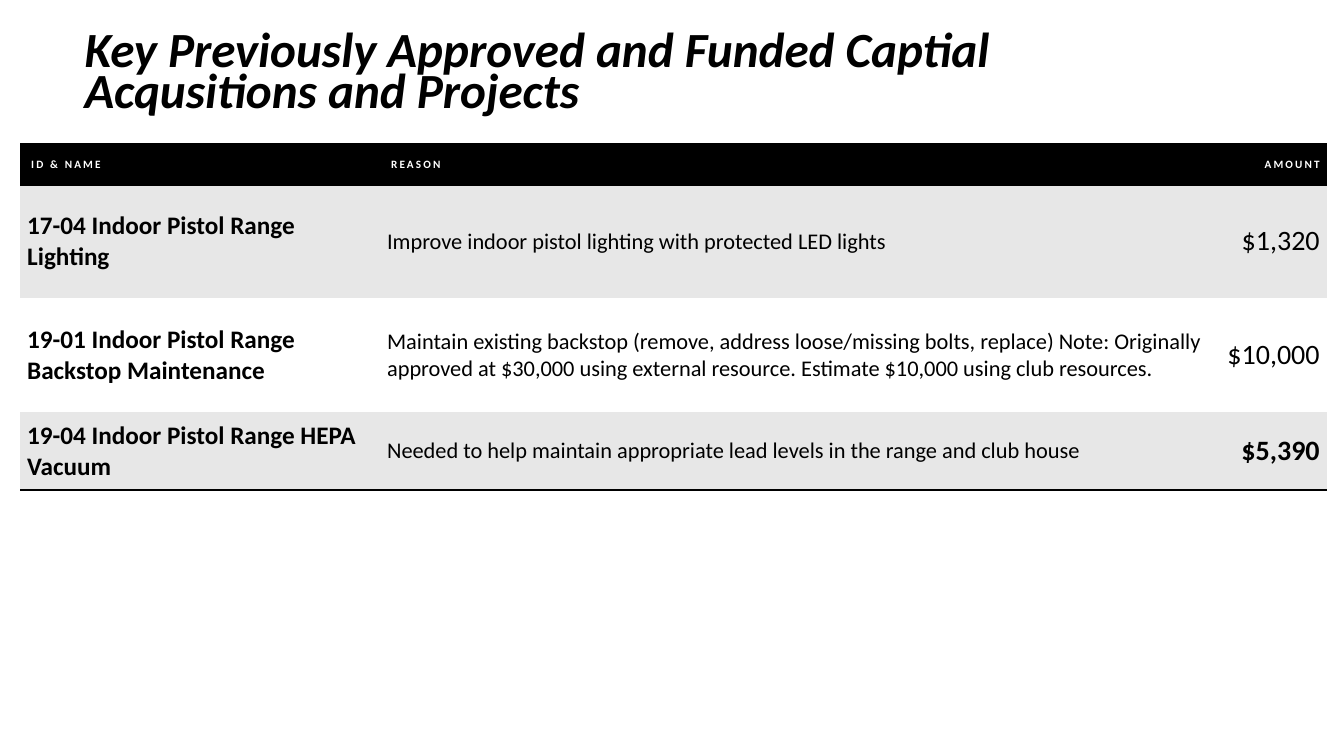
from lxml.etree import SubElement
from pptx import Presentation
from pptx.dml.color import RGBColor
from pptx.enum.text import MSO_ANCHOR, PP_ALIGN
from pptx.oxml.ns import qn
from pptx.util import Inches, Pt


def color(value):
    return RGBColor.from_string(value)


def set_border(cell, side, points):
    """Draw a black cell border, or none when points is 0."""
    line = SubElement(cell._tc.get_or_add_tcPr(), qn(f"a:ln{side}"), w=str(Pt(points)))
    if points:
        fill = SubElement(line, qn("a:solidFill"))
        SubElement(fill, qn("a:srgbClr"), val="000000")
    else:
        SubElement(line, qn("a:noFill"))


presentation = Presentation()
presentation.slide_width = Inches(13.33)
presentation.slide_height = Inches(7.5)
slide = presentation.slides.add_slide(presentation.slide_layouts[6])

# Title
title = slide.shapes.add_textbox(Inches(0.74), Inches(0.19), Inches(11.5), Inches(1.02))
title.text_frame.word_wrap = True
title.text_frame.vertical_anchor = MSO_ANCHOR.BOTTOM
paragraph = title.text_frame.paragraphs[0]
paragraph.text = "Key Previously Approved and Funded Captial Acqusitions and Projects"
paragraph.line_spacing = 0.7
paragraph.space_after = Pt(6)
paragraph.font.name = "Calibri"
paragraph.font.size = Pt(35.1)
paragraph.font.bold = paragraph.font.italic = True
paragraph.font.color.rgb = color("000000")

# Project table
rows = [
    ("ID & NAME", "REASON", "AMOUNT"),
    ("17-04 Indoor Pistol Range Lighting",
     "Improve indoor pistol lighting with protected LED lights", "$1,320"),
    ("19-01 Indoor Pistol Range Backstop Maintenance",
     "Maintain existing backstop (remove, address loose/missing bolts, replace) "
     "Note: Originally approved at $30,000 using external resource. "
     "Estimate $10,000 using club resources. ", "$10,000"),
    ("19-04 Indoor Pistol Range HEPA Vacuum",
     "Needed to help maintain appropriate lead levels in the range and club house",
     "$5,390"),
]
column_widths = [3.57, 8.3, 1.09]
row_heights = [0.4, 1.13, 1.13, 0.77]
body_sizes = [18, 16, 20]
last_row = len(rows) - 1

table = slide.shapes.add_table(len(rows), len(column_widths), Inches(0.2), Inches(1.43),
                               Inches(12.95), Inches(3.43)).table
table.first_row = table.horz_banding = False
for column, width in zip(table.columns, column_widths):
    column.width = Inches(width)

for row_index, row in enumerate(rows):
    table.rows[row_index].height = Inches(row_heights[row_index])
    header = row_index == 0
    for column_index, text in enumerate(row):
        cell = table.cell(row_index, column_index)

        # Borders, fill and margins
        bottom = 2 if row_index in (0, last_row) else 0
        top = 2 if row_index in (0, 1) else 0
        for side, points in (("L", 0), ("R", 0), ("T", top), ("B", bottom)):
            set_border(cell, side, points)
        cell.fill.solid()
        cell.fill.fore_color.rgb = color(
            "000000" if header else "E7E7E7" if row_index % 2 else "FFFFFF")
        cell.vertical_anchor = MSO_ANCHOR.MIDDLE
        cell.margin_left = Inches(0.11 if header else 0.07)
        cell.margin_right = Inches(0.07)
        cell.margin_top = cell.margin_bottom = Inches(0.07 if header else 0.04)

        # Text
        paragraph = cell.text_frame.paragraphs[0]
        paragraph.alignment = PP_ALIGN.RIGHT if column_index == 2 else PP_ALIGN.LEFT
        run = paragraph.add_run()
        run.text = text
        font = run.font
        font.name = "Calibri"
        font.size = Pt(8 if header else body_sizes[column_index])
        font.bold = (header or column_index == 0
                     or (row_index == last_row and column_index == 2))
        font.color.rgb = color("FFFFFF" if header else "000000")
        if header:
            run._r.get_or_add_rPr().set("spc", "150")

presentation.save("out.pptx")
